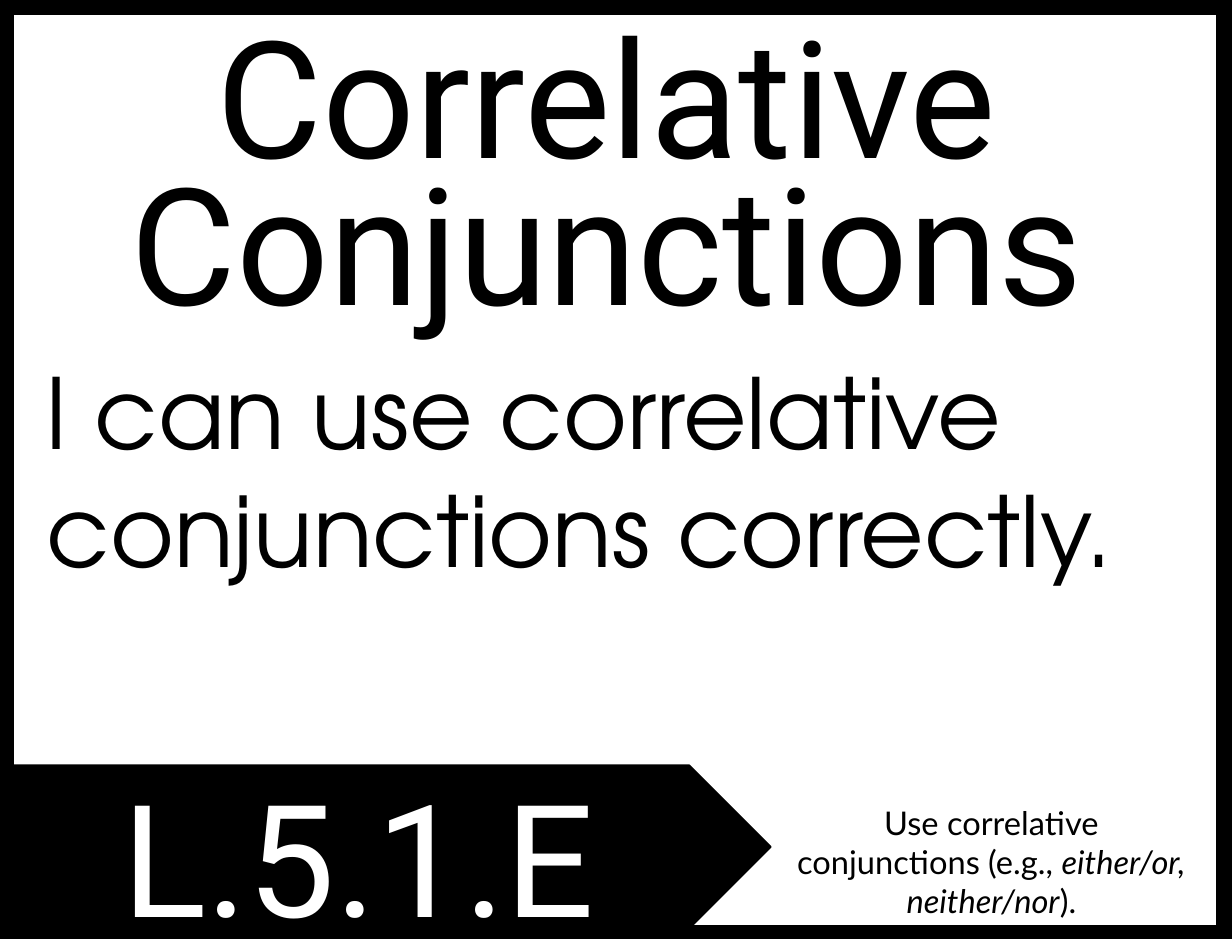
from pptx import Presentation
from pptx.dml.color import RGBColor
from pptx.enum.shapes import MSO_SHAPE
from pptx.enum.text import MSO_ANCHOR, MSO_AUTO_SIZE, PP_ALIGN
from pptx.oxml.xmlchemy import OxmlElement
from pptx.util import Inches, Pt

COLOURS = {"ink": "000000", "paper": "FFFFFF"}


def colour(name):
    return RGBColor.from_string(COLOURS[name])


def place(shape, box):
    shape.left, shape.top, shape.width, shape.height = map(Inches, box)


def add_panel(page, kind, box, fill, line_width):
    panel = page.shapes.add_shape(kind, *map(Inches, box))
    panel.shadow.inherit = False
    panel.fill.solid()
    panel.fill.fore_color.rgb = colour(fill)
    panel.line.color.rgb = colour("ink")
    panel.line.width = Pt(line_width)
    return panel


def write(shape, *parts, font, size, ink="ink", align=PP_ALIGN.CENTER,
          spacing=None, margin=None):
    frame = shape.text_frame
    frame.word_wrap = True
    frame.auto_size = MSO_AUTO_SIZE.NONE
    frame.vertical_anchor = MSO_ANCHOR.TOP
    if margin is not None:
        frame.margin_left = frame.margin_right = Inches(margin)
        frame.margin_top = frame.margin_bottom = Inches(margin)
    para = frame.paragraphs[0]
    para.alignment = align
    para.space_before = Pt(0)
    if spacing:
        para.line_spacing = spacing
    for text, italic in parts:
        span = para.add_run()
        span.text = text
        span.font.name = font
        span.font.size = Pt(size)
        span.font.italic = italic
        span.font.color.rgb = colour(ink)
    return para


def bring_to_front(shape):
    shape.element.getparent().append(shape.element)


def add_code_banner(page, box):
    left, top, width, height = box
    add_panel(page, MSO_SHAPE.PENTAGON, box, "ink", 1)
    label = page.shapes.add_textbox(
        *map(Inches, (left + 0.41, top - 0.09, width - 1.36, height + 0.33)))
    write(label, ("L.5.1.E", False), font="Roboto", size=96, ink="paper")


def add_standard(page, box):
    standard = page.shapes.add_textbox(*map(Inches, box))
    write(standard,
          ("Use correlative conjunctions (e.g., ", False),
          ("either/or, neither/nor", True),
          (").", False),
          font="Lato", size=20)


def fill_title(page, box):
    title = page.shapes.title
    place(title, box)
    write(title, ("Correlative Conjunctions", False),
          font="Roboto", size=100, spacing=Pt(90))
    bring_to_front(title)


def fill_goal(page, box):
    goal = page.placeholders[1]
    place(goal, box)
    para = write(goal, ("I can use correlative conjunctions correctly.", False),
                 font="TeX Gyre Adventor", size=60, align=PP_ALIGN.LEFT, margin=0)
    properties = para._p.get_or_add_pPr()
    properties.set("marL", str(Inches(0.01)))
    properties.set("indent", str(Inches(-0.01)))
    properties.append(OxmlElement("a:buNone"))
    bring_to_front(goal)


def build_poster(deck):
    page = deck.slides.add_slide(deck.slide_layouts[1])
    page.background.fill.solid()
    page.background.fill.fore_color.rgb = colour("ink")
    add_panel(page, MSO_SHAPE.RECTANGLE, (0.08, 0.09, 10.33, 7.83), "paper", 6)
    add_code_banner(page, (0.08, 6.52, 6.49, 1.39))
    add_standard(page, (6.63, 6.79, 3.64, 0.77))
    fill_title(page, (-0.08, 0.33, 10.5, 2.63))
    fill_goal(page, (0.39, 3, 9.72, 3.03))


def main():
    deck = Presentation()
    deck.slide_width = Inches(10.5)
    deck.slide_height = Inches(8)
    build_poster(deck)
    deck.save("out.pptx")


if __name__ == "__main__":
    main()
